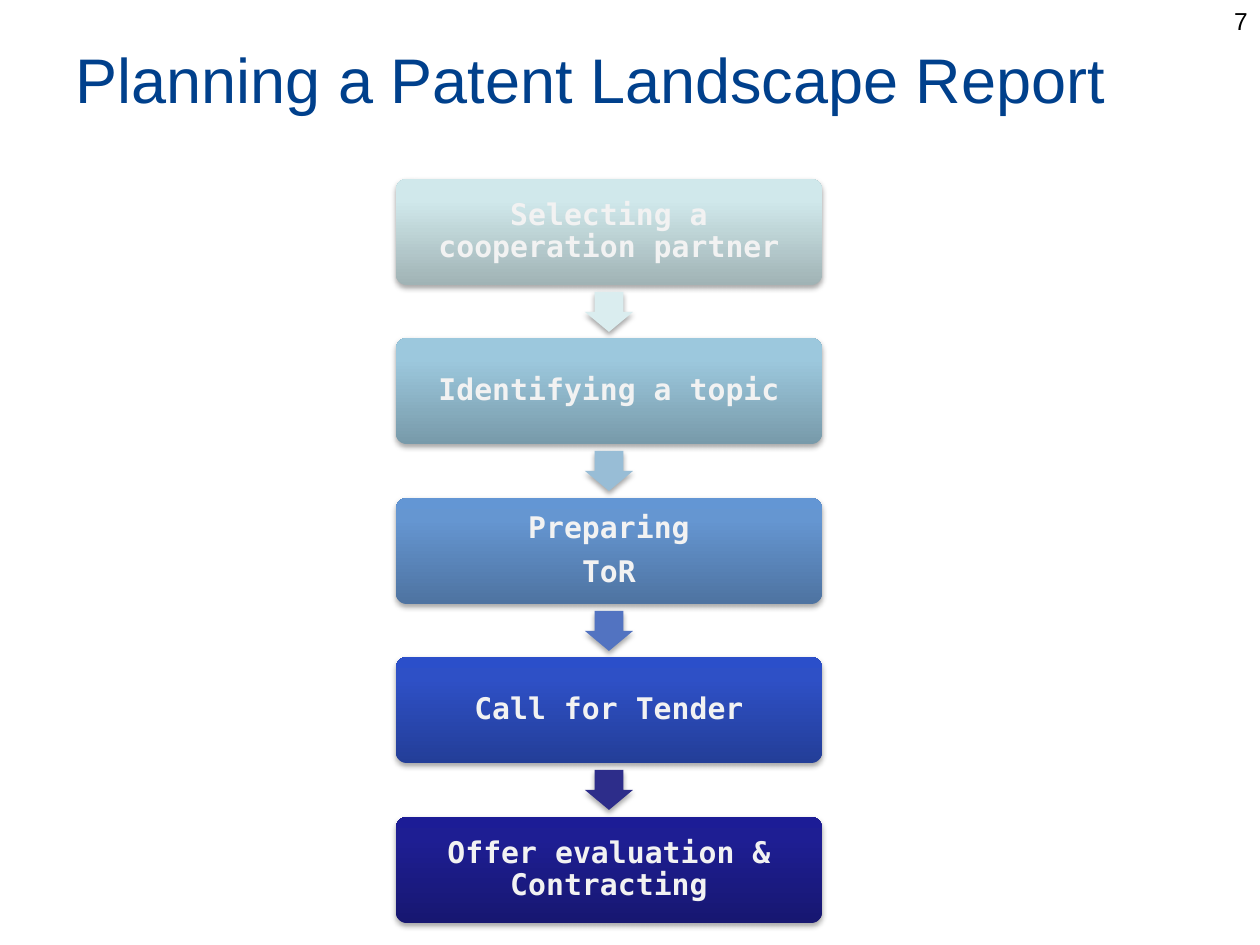
import copy
import lxml.etree
import pptx
import pptx.util
import pptx.dml.color
import pptx.enum.shapes
import pptx.enum.text
import pptx.oxml

PX = 914400 / 126
SHAPE = pptx.enum.shapes.MSO_SHAPE
ALIGN = pptx.enum.text.PP_ALIGN
MID = pptx.enum.text.MSO_ANCHOR.MIDDLE
NS = "http://schemas.openxmlformats.org/drawingml/2006/main"
SHADOW = (f'<a:outerShdw xmlns:a="{NS}" blurRad="39370" dist="22860" dir="5400000" '
          'rotWithShape="0"><a:srgbClr val="000000"><a:alpha val="35000"/>'
          '</a:srgbClr></a:outerShdw>')
COLORS = {"title": "00408C", "number": "000000", "label": "F2F2F2"}

# Each step: paragraphs, gradient from bottom to top, colour of the arrow below
STEPS = [
    (["Selecting a cooperation partner"], ["A0B3B5", "D0E8EB", "D1EAEC"], "DAEDEF"),
    (["Identifying a topic"], ["789AAA", "9CC8DD", "9BC9DF"], "98BDD6"),
    (["Preparing", "ToR"], ["4E73A1", "6596D1", "6396D4"], "5273C1"),
    (["Call for Tender"], ["233E98", "2E50C6", "2B4FCA"], "2D2D8A"),
    (["Offer evaluation & Contracting"], ["171771", "1E1E93", "1C1C96"], None),
]


def add_part(kind, *box):
    part = slide.shapes.add_shape(kind, *[round(n * PX) for n in box])
    part.line.fill.background()
    part.shadow.inherit = False
    effect = part.element.spPr.find(f"{{{NS}}}effectLst")
    effect.append(pptx.oxml.parse_xml(SHADOW))
    return part


def add_run(par, text, size, color, face="Arial", bold=False):
    run = par.add_run()
    run.text = text
    run.font.size = pptx.util.Pt(size)
    run.font.name = face
    run.font.bold = bold
    run.font.color.rgb = pptx.dml.color.RGBColor.from_string(color)


deck = pptx.Presentation()
deck.slide_width, deck.slide_height = round(1260 * PX), round(945 * PX)
slide = deck.slides.add_slide(deck.slide_layouts[5])

# Title
title = slide.shapes.title
title.left, title.top, title.width, title.height = [
    round(n * PX) for n in (63, 0, 1134, 157)]
title.text_frame.vertical_anchor = MID
par = title.text_frame.paragraphs[0]
par.alignment = ALIGN.LEFT
add_run(par, "Planning a Patent Landscape Report", 36, COLORS["title"])

# Slide number
box = slide.shapes.add_textbox(*[round(n * PX) for n in (966, 0, 294, 66)])
box.text_frame.word_wrap = True
par = box.text_frame.paragraphs[0]
par.alignment = ALIGN.RIGHT
add_run(par, "7", 14, COLORS["number"])

# Steps and the arrows between them
for i, (lines, shades, tint) in enumerate(STEPS):
    top = 179 + i * 638 // 4
    step = add_part(SHAPE.ROUNDED_RECTANGLE, 396, top, 426, 106)
    step.adjustments[0] = 0.1

    # Three-stop gradient
    step.fill.gradient()
    step.fill.gradient_angle = 90
    stops = step.element.spPr.find(f".//{{{NS}}}gsLst")
    stops.append(copy.deepcopy(stops[-1]))
    for stop, place, shade in zip(step.fill.gradient_stops, (0, 0.8, 1), shades):
        stop.position = place
        stop.color.rgb = pptx.dml.color.RGBColor.from_string(shade)

    # Label
    frame = step.text_frame
    frame.word_wrap = True
    frame.vertical_anchor = MID
    frame.margin_left = frame.margin_right = round(9 * PX)
    frame.margin_top = frame.margin_bottom = round(9 * PX)
    for j, line in enumerate(lines):
        par = frame.add_paragraph() if j else frame.paragraphs[0]
        par.alignment = ALIGN.CENTER
        par.line_spacing = 0.9
        par.space_after = pptx.util.Pt(7)
        add_run(par, line, 17, COLORS["label"], "DejaVu Sans Mono", True)

    # Arrow to the next step
    if tint:
        arrow = add_part(SHAPE.DOWN_ARROW, 585, top + 113, 48, 40)
        arrow.adjustments[0] = 0.6
        arrow.adjustments[1] = 0.5
        arrow.fill.solid()
        arrow.fill.fore_color.rgb = pptx.dml.color.RGBColor.from_string(tint)

deck.save("out.pptx")
